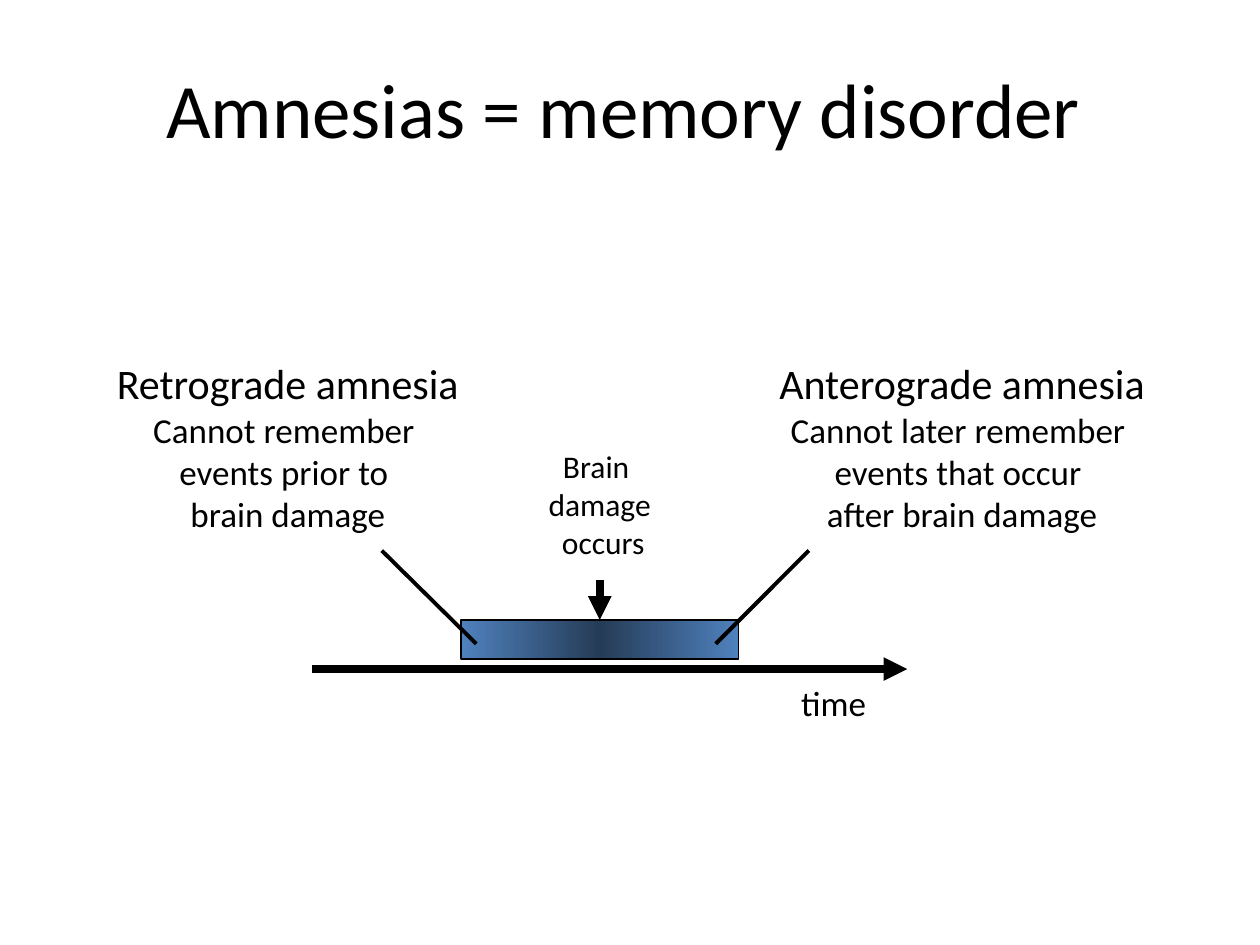
"""Build a slide that contrasts retrograde and anterograde amnesia on a timeline."""
import copy

import pptx
import pptx.dml.color
import pptx.enum.shapes
import pptx.enum.text
import pptx.oxml.ns
import pptx.util
from lxml import etree

PX = 9144
BLACK = "000000"
CENTER = pptx.enum.text.PP_ALIGN.CENTER
LEFT = pptx.enum.text.PP_ALIGN.LEFT


def color(hex_code):
    return pptx.dml.color.RGBColor.from_string(hex_code)


deck = pptx.Presentation()
deck.slide_width, deck.slide_height = 1000 * PX, 750 * PX
slide = deck.slides.add_slide(deck.slide_layouts[6])

bar = slide.shapes.add_shape(
    pptx.enum.shapes.MSO_SHAPE.RECTANGLE, 366 * PX, 492 * PX, 220 * PX, 31 * PX)
bar.shadow.inherit = False
bar.line.color.rgb = color(BLACK)
bar.line.width = pptx.util.Pt(0.75)
bar.fill.gradient()
bar.fill.gradient_angle = 0
first_stop = bar.fill.gradient_stops._gsLst[0]
first_stop.addnext(copy.deepcopy(first_stop))
for stop, position, shade in zip(
        bar.fill.gradient_stops, (0, 0.5, 1), ("4F81BD", "253C57", "4F81BD")):
    stop.position = position
    stop.color.rgb = color(shade)

lines = [
    (248, 531, 720, 531, 4.5, True, False),
    (476, 460, 476, 492, 4.5, True, True),
    (642, 437, 568, 511, 2.25, False, False),
    (303, 437, 378, 511, 2.25, False, False),
]
for x1, y1, x2, y2, width, has_arrow, meets_bar in lines:
    line = slide.shapes.add_connector(
        pptx.enum.shapes.MSO_CONNECTOR.STRAIGHT, x1 * PX, y1 * PX, x2 * PX, y2 * PX)
    line.line.color.rgb = color(BLACK)
    line.line.width = pptx.util.Pt(width)
    if meets_bar:
        line.end_connect(bar, 0)
    if has_arrow:
        etree.SubElement(
            line.line._get_or_add_ln(), pptx.oxml.ns.qn("a:tailEnd"), type="triangle")
    etree.SubElement(line._element.spPr, pptx.oxml.ns.qn("a:effectLst"))

labels = [
    (626, 536, 73, 43, LEFT, 20, 20, ["time"]),
    (421, 350, 110, 100, CENTER, 18, 18, ["Brain ", "damage", " occurs"]),
    (594, 279, 339, 150, CENTER, 24, 20,
     ["Anterograde amnesia", "Cannot later remember ", "events that occur ",
      "after brain damage"]),
    (67, 279, 323, 150, CENTER, 24, 20,
     ["Retrograde amnesia", "Cannot remember ", "events prior to ", "brain damage"]),
    (122, 44, 817, 83, LEFT, 44, 44, ["Amnesias = memory disorder"]),
]
for left, top, width, height, align, heading_size, body_size, wording in labels:
    frame = slide.shapes.add_textbox(left * PX, top * PX, width * PX, height * PX).text_frame
    frame.word_wrap = False
    frame.auto_size = pptx.enum.text.MSO_AUTO_SIZE.SHAPE_TO_FIT_TEXT
    frame.text = "\n".join(wording)
    for row, paragraph in enumerate(frame.paragraphs):
        paragraph.alignment = align
        font = paragraph.runs[0].font
        font.name = "Calibri"
        font.size = pptx.util.Pt(body_size if row else heading_size)
        font.color.rgb = color(BLACK)

deck.save("out.pptx")
